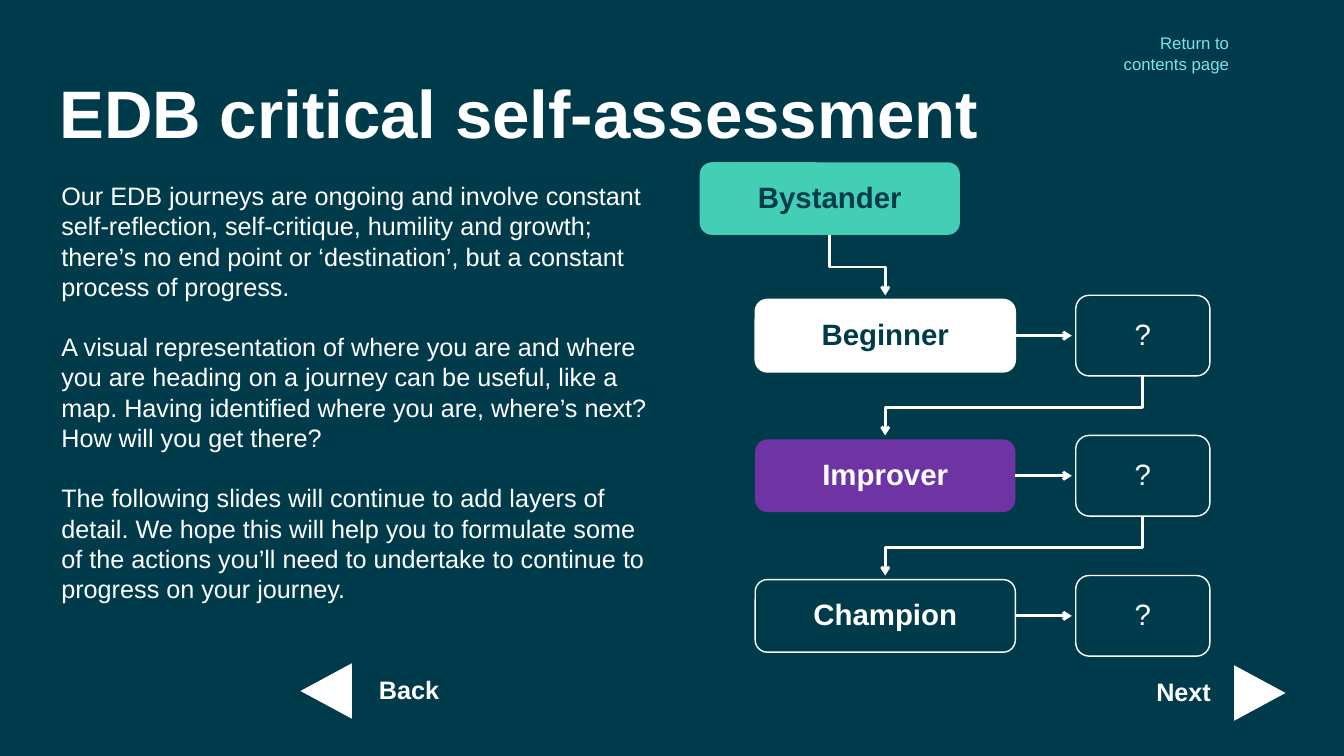
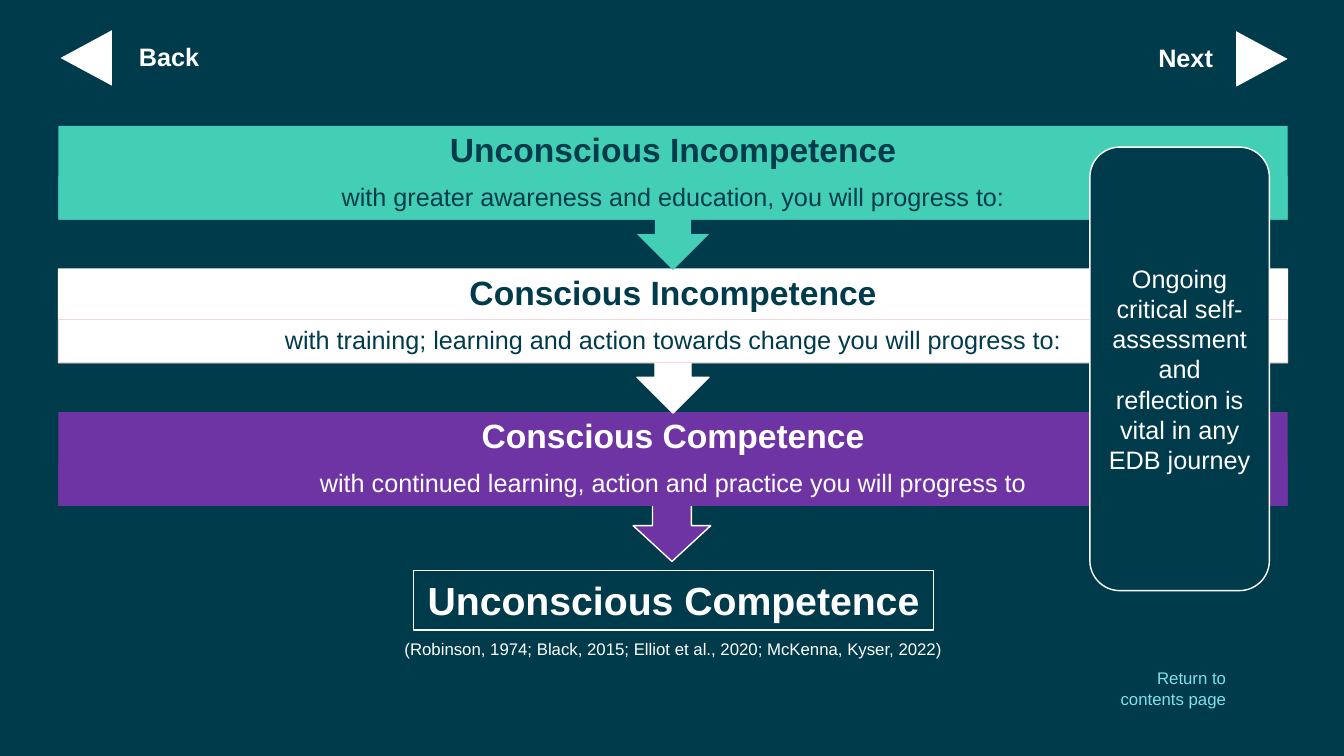
from lxml import etree
from pptx import Presentation
from pptx.dml.color import RGBColor
from pptx.enum.shapes import MSO_CONNECTOR as Connector, MSO_SHAPE as Shape
from pptx.enum.text import MSO_ANCHOR as Anchor, MSO_AUTO_SIZE as AutoSize, PP_ALIGN as Align
from pptx.oxml.ns import qn
from pptx.util import Inches, Pt

NAVY, WHITE, TEAL, PURPLE = "003B4C", "FFFFFF", "43CFB5", "6F34A3"
AQUA, BLUSH = "7EE1E8", "F6D5D2"
FONT = "Arial"

PARAGRAPHS = [
    "Our EDB journeys are ongoing and involve constant self-reflection, self-critique, "
    "humility and growth; there’s no end point or ‘destination’, but a constant process of progress.",
    "A visual representation of where you are and where you are heading on a journey can be useful, "
    "like a map. Having identified where you are, where’s next? How will you get there?",
    "The following slides will continue to add layers of detail. We hope this will help you to "
    "formulate some of the actions you’ll need to undertake to continue to progress on your journey.",
]
STAGES = [
    ("Beginner", WHITE, NAVY, WHITE),
    ("Improver", PURPLE, WHITE, None),
    ("Champion", NAVY, WHITE, WHITE),
]
BANDS = [
    ("Unconscious Incompetence", "with greater awareness and education, you will progress to:",
     TEAL, NAVY, None, None),
    ("Conscious Incompetence", "with training; learning and action towards change you will progress to:",
     WHITE, NAVY, WHITE, BLUSH),
    ("Conscious Competence", "with continued learning, action and practice you will progress to",
     PURPLE, WHITE, None, None),
]


def rgb(value):
    """Turn a hex string into a colour."""
    return RGBColor.from_string(value)


def box(left, top, width, height):
    """Convert a box in inches to lengths."""
    return [Inches(value) for value in (left, top, width, height)]


def write(frame, texts, size, color, bold=False, align=Align.LEFT, anchor=Anchor.TOP,
          inset=None, spacing=None, gap=0):
    """Fill a text frame with one run per paragraph."""
    frame.word_wrap = True
    frame.auto_size = AutoSize.NONE
    frame.vertical_anchor = anchor
    if inset is not None:
        frame.margin_left = frame.margin_right = Inches(inset)
        frame.margin_top = frame.margin_bottom = Inches(inset)
    for index, text in enumerate(texts):
        paragraph = frame.add_paragraph() if index else frame.paragraphs[0]
        paragraph.alignment = align
        if spacing:
            paragraph.line_spacing = spacing
        if index:
            paragraph.space_before = Pt(gap)
        run = paragraph.add_run()
        run.text = text
        run.font.name = FONT
        run.font.size = Pt(size)
        run.font.bold = bold
        run.font.color.rgb = rgb(color)


def add_text(slide, area, texts, size, color, **style):
    """Add a text box."""
    write(slide.shapes.add_textbox(*box(*area)).text_frame, texts, size, color, **style)


def add_block(slide, kind, area, fill, line=None):
    """Add a filled preset shape with an optional thin outline."""
    shape = slide.shapes.add_shape(kind, *box(*area))
    shape.shadow.inherit = False
    shape.fill.solid()
    shape.fill.fore_color.rgb = rgb(fill)
    if line:
        shape.line.color.rgb = rgb(line)
        shape.line.width = Pt(1)
    else:
        shape.line.fill.background()
    return shape


def label(shape, text, size, color, **style):
    """Centre one line of text in a shape."""
    write(shape.text_frame, [text], size, color, align=Align.CENTER, anchor=Anchor.MIDDLE, **style)


def style_arrow(shape):
    """Give a line the white arrow style without a shadow."""
    shape.line.color.rgb = rgb(WHITE)
    shape.line.width = Pt(2)
    etree.SubElement(shape.line._get_or_add_ln(), qn("a:tailEnd"), type="arrow")
    etree.SubElement(shape._element.spPr, qn("a:effectLst"))


def add_bent_arrow(slide, start_x, start_y, end_x):
    """Draw an arrow that goes down, across and down to the next row."""
    points = [(start_x, start_y + 0.32), (end_x, start_y + 0.32), (end_x, start_y + 0.6)]
    builder = slide.shapes.build_freeform(Inches(start_x), Inches(start_y))
    builder.add_line_segments([(Inches(x), Inches(y)) for x, y in points], close=False)
    arrow = builder.convert_to_shape()
    arrow.fill.background()
    style_arrow(arrow)


def add_straight_arrow(slide, source, length):
    """Draw an arrow from the right side of a block."""
    x, y = source.left + source.width, source.top + source.height // 2
    arrow = slide.shapes.add_connector(Connector.STRAIGHT, x, y, x + Inches(length), y)
    arrow.begin_connect(source, 3)
    style_arrow(arrow)


def add_navigation(slide, text, left, top):
    """Place a Back or Next label with its triangle."""
    back = text == "Back"
    triangle_x, label_x, angle = (left, left + 0.7, 270) if back else (left + 0.85, left, 90)
    triangle = add_block(slide, Shape.ISOSCELES_TRIANGLE, (triangle_x, top, 0.55, 0.51), WHITE)
    triangle.rotation = angle
    add_text(slide, (label_x, top + 0.04, 0.84, 0.4), [text], 18, WHITE, bold=True)


def add_return(slide, left, top):
    """Place the label that leads back to the contents."""
    add_text(slide, (left, top, 1.45, 0.5), ["Return to contents page"], 12, AQUA, align=Align.RIGHT)


def set_title(slide, text):
    """Move and format the title placeholder."""
    title = slide.shapes.title
    title.left, title.top, title.width, title.height = box(0.59, 0.8, 12.2, 0.87)
    write(title.text_frame, [text], 48, WHITE, bold=True, inset=0, spacing=0.9)


def add_journey(slide, left, top):
    """Draw the stages, their next steps and the arrows between them."""
    width, height, pitch = 2.58, 0.72, 1.39
    stage_x, step_x = left + 0.55, left + 3.73
    middle_x, step_middle = stage_x + width / 2, step_x + 1.33 / 2
    first = add_block(slide, Shape.ROUNDED_RECTANGLE, (left, top, width, height), TEAL)
    label(first, "Bystander", 21, NAVY, bold=True, spacing=0.9)
    add_bent_arrow(slide, left + width / 2, top + height, middle_x)
    for index, (name, fill, color, line) in enumerate(STAGES):
        y = top + 1.36 + index * pitch
        stage = add_block(slide, Shape.ROUNDED_RECTANGLE, (stage_x, y, width, height), fill, line)
        label(stage, name, 21, color, bold=True, spacing=0.9)
        add_straight_arrow(slide, stage, 0.56)
        if index < len(STAGES) - 1:
            add_bent_arrow(slide, step_middle, y + 0.75, middle_x)
        step = add_block(slide, Shape.FLOWCHART_ALTERNATE_PROCESS,
                         (step_x, y - 0.04, 1.33, 0.8), NAVY, WHITE)
        label(step, "?", 21, WHITE, spacing=0.9)


def add_bands(slide, left, top, width):
    """Stack the competence bands from the bottom up, so each arrow overlaps the next band."""
    pitch = 1.42
    for index, (heading, caption, fill, color, line, caption_line) in reversed(list(enumerate(BANDS))):
        y = top + index * pitch
        last = index == len(BANDS) - 1
        kind, height = (Shape.RECTANGLE, 0.93) if last else (Shape.DOWN_ARROW_CALLOUT, 1.43)
        add_block(slide, kind, (left, y, width, height), fill, line)
        add_text(slide, (left, y, width, 0.5), [heading], 24, color, bold=True, inset=0,
                 align=Align.CENTER, anchor=Anchor.MIDDLE, spacing=0.9)
        strip = add_block(slide, Shape.RECTANGLE, (left, y + 0.5, width, 0.43), fill, caption_line)
        label(strip, caption, 18, color, inset=0.03, spacing=0.9)


def build_assessment(presentation):
    """Build the self-assessment slide."""
    slide = presentation.slides.add_slide(presentation.slide_layouts[5])
    set_title(slide, "EDB critical self-assessment")
    add_text(slide, (0.51, 1.74, 6.15, 4.5), PARAGRAPHS, 18, WHITE, gap=21.6)
    add_navigation(slide, "Next", 11.37, 6.62)
    add_navigation(slide, "Back", 2.96, 6.6)
    add_return(slide, 10.84, 0.28)
    add_journey(slide, 6.94, 1.61)


def build_competence(presentation):
    """Build the slide with the levels of competence."""
    slide = presentation.slides.add_slide(presentation.slide_layouts[6])
    add_block(slide, Shape.DOWN_ARROW, (6.28, 4.86, 0.77, 0.71), PURPLE, WHITE)
    add_bands(slide, 0.58, 1.25, 12.19)
    goal = add_block(slide, Shape.RECTANGLE, (4.1, 5.66, 5.16, 0.59), NAVY, WHITE)
    label(goal, "Unconscious Competence", 28, WHITE, bold=True)
    add_navigation(slide, "Back", 0.58, 0.32)
    add_navigation(slide, "Next", 11.39, 0.33)
    add_return(slide, 10.81, 6.58)
    add_text(slide, (3.9, 6.29, 5.56, 0.3),
             ["(Robinson, 1974; Black, 2015; Elliot et al., 2020; McKenna, Kyser, 2022)"],
             12, WHITE, align=Align.CENTER)
    reminder = add_block(slide, Shape.ROUNDED_RECTANGLE, (10.81, 1.46, 1.78, 4.4), NAVY, WHITE)
    label(reminder, "Ongoing critical self-assessment and reflection is vital in any EDB journey",
          18, WHITE)


def main():
    """Build and save the presentation."""
    presentation = Presentation()
    presentation.slide_width, presentation.slide_height = Inches(13.33), Inches(7.5)
    background = presentation.slide_master.background.fill
    background.solid()
    background.fore_color.rgb = rgb(NAVY)
    build_assessment(presentation)
    build_competence(presentation)
    presentation.save("out.pptx")


if __name__ == "__main__":
    main()
